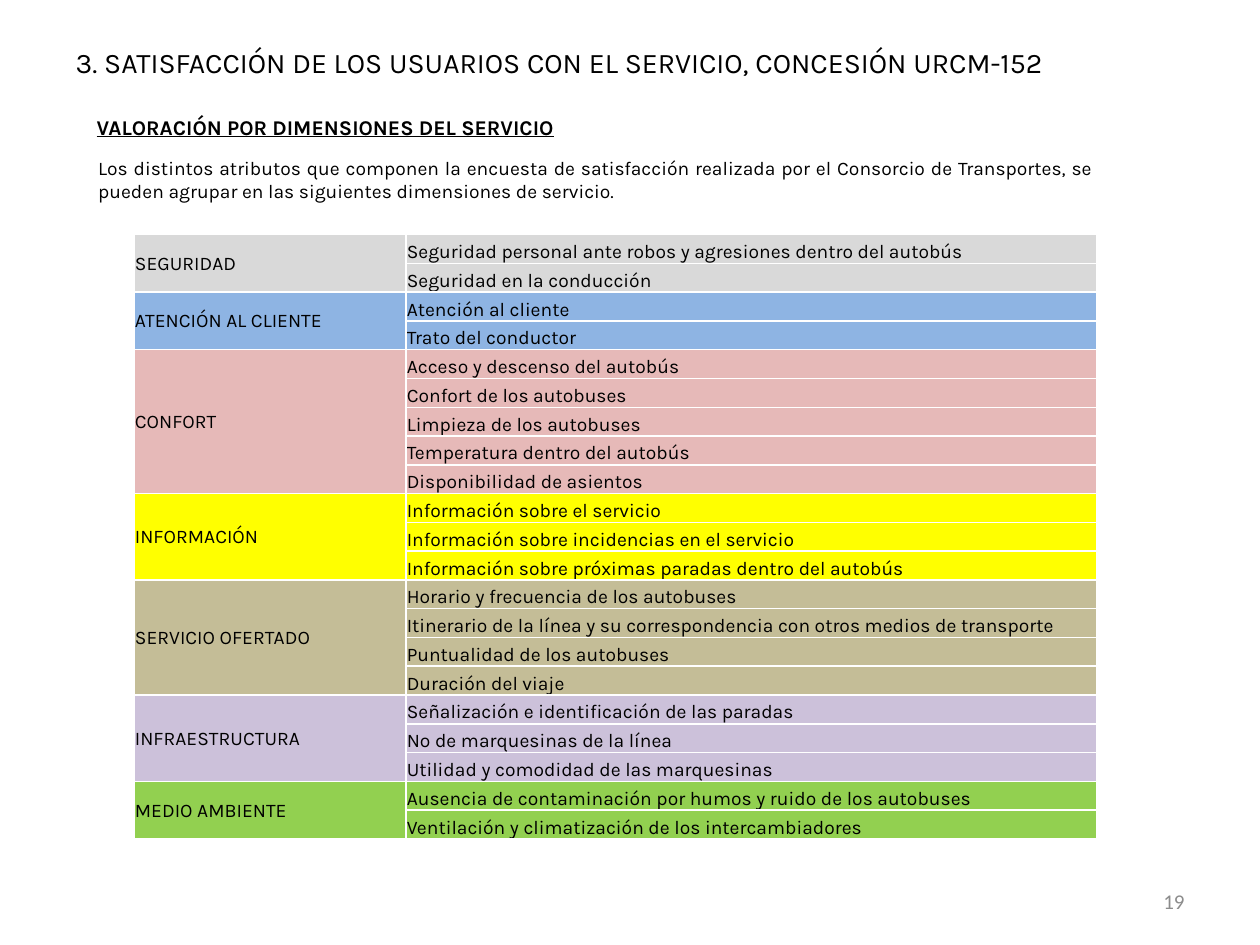
"""Build the slide that groups the survey attributes by service dimension."""
from lxml.etree import SubElement
from pptx import Presentation
from pptx.dml.color import RGBColor
from pptx.enum.text import MSO_ANCHOR as Anchor, MSO_AUTO_SIZE as AutoSize, PP_ALIGN as Align
from pptx.oxml.ns import qn
from pptx.util import Cm, Pt

BLACK = RGBColor(0x00, 0x00, 0x00)
WHITE = RGBColor(0xFF, 0xFF, 0xFF)
GRAY = RGBColor(0x8C, 0x8C, 0x8C)
SILVER = RGBColor(0xD9, 0xD9, 0xD9)
BLUE = RGBColor(0x8E, 0xB4, 0xE3)
PINK = RGBColor(0xE6, 0xB9, 0xB8)
YELLOW = RGBColor(0xFF, 0xFF, 0x00)
TAN = RGBColor(0xC4, 0xBD, 0x97)
LILAC = RGBColor(0xCC, 0xC1, 0xDA)
GREEN = RGBColor(0x92, 0xD0, 0x50)

TITLE = "3. SATISFACCIÓN DE LOS USUARIOS CON EL SERVICIO, CONCESIÓN URCM-152"
HEADING = "VALORACIÓN POR DIMENSIONES DEL SERVICIO"
INTRO = (
    "Los distintos atributos que componen la encuesta de satisfacción realizada por el "
    "Consorcio de Transportes, se pueden agrupar en las siguientes dimensiones de servicio."
)
PAGE_NUMBER = "19"
DIMENSIONS = [
    ("SEGURIDAD", SILVER, [
        "Seguridad personal ante robos y agresiones dentro del autobús",
        "Seguridad en la conducción",
    ]),
    ("ATENCIÓN AL CLIENTE", BLUE, ["Atención al cliente", "Trato del conductor"]),
    ("CONFORT", PINK, [
        "Acceso y descenso del autobús",
        "Confort de los autobuses",
        "Limpieza de los autobuses",
        "Temperatura dentro del autobús",
        "Disponibilidad de asientos",
    ]),
    ("INFORMACIÓN", YELLOW, [
        "Información sobre el servicio",
        "Información sobre incidencias en el servicio",
        "Información sobre próximas paradas dentro del autobús",
    ]),
    ("SERVICIO OFERTADO", TAN, [
        "Horario y frecuencia de los autobuses",
        "Itinerario de la línea y su correspondencia con otros medios de transporte",
        "Puntualidad de los autobuses",
        "Duración del viaje",
    ]),
    ("INFRAESTRUCTURA", LILAC, [
        "Señalización e identificación de las paradas",
        "Nº de marquesinas de la línea",
        "Utilidad y comodidad de las marquesinas",
    ]),
    ("MEDIO AMBIENTE", GREEN, [
        "Ausencia de contaminación por humos y ruido de los autobuses",
        "Ventilación y climatización de los intercambiadores",
    ]),
]

COLUMN_WIDTHS = [Cm(5.48), Cm(13.92)]
ROW_HEIGHT = Cm(0.58)
FRAME_FORMAT = {"word_wrap": True, "auto_size": AutoSize.NONE}
CELL_FORMAT = {
    "margin_left": Cm(0.02), "margin_right": Cm(0.02),
    "margin_top": Cm(0.02), "margin_bottom": 0,
}
BORDER_SIDES = ("a:lnL", "a:lnR", "a:lnT", "a:lnB")


def set_attributes(target, values):
    for name, value in values.items():
        setattr(target, name, value)


def write(frame, text, size, align=Align.LEFT, color=BLACK, **font_format):
    paragraph = frame.paragraphs[0]
    paragraph.alignment = align
    run = paragraph.add_run()
    run.text = text
    set_attributes(run.font, {"name": "Karla", "size": Pt(size), **font_format})
    run.font.color.rgb = color


def place_text(shape, box, text, size, anchor=Anchor.TOP, **text_format):
    set_attributes(shape, dict(zip(("left", "top", "width", "height"), map(Cm, box))))
    set_attributes(shape.text_frame, {**FRAME_FORMAT, "vertical_anchor": anchor})
    write(shape.text_frame, text, size, **text_format)


def add_text(slide, box, text, size, **text_format):
    place_text(slide.shapes.add_textbox(0, 0, 0, 0), box, text, size, **text_format)


def style_cell(cell, color):
    set_attributes(cell, CELL_FORMAT)
    properties = cell._tc.get_or_add_tcPr()
    for side in BORDER_SIDES:
        border = SubElement(properties, qn(side), w=str(Pt(1)))
        fill = SubElement(border, qn("a:solidFill"))
        SubElement(fill, qn("a:srgbClr"), val=str(WHITE))
    cell.fill.solid()
    cell.fill.fore_color.rgb = color


def fill_cell(cell, text, anchor):
    cell.vertical_anchor = anchor
    write(cell.text_frame, text, 11)


def add_dimension_table(slide):
    row_count = sum(len(attributes) for _, _, attributes in DIMENSIONS)
    table = slide.shapes.add_table(
        row_count, len(COLUMN_WIDTHS), Cm(2.7), Cm(4.73),
        sum(COLUMN_WIDTHS), ROW_HEIGHT * row_count,
    ).table
    set_attributes(table, {"first_row": False, "horz_banding": False})
    for column, width in zip(table.columns, COLUMN_WIDTHS):
        column.width = width
    for row in table.rows:
        row.height = ROW_HEIGHT
    first = 0
    for dimension, color, attributes in DIMENSIONS:
        for row, attribute in enumerate(attributes, first):
            for column in range(len(COLUMN_WIDTHS)):
                style_cell(table.cell(row, column), color)
            fill_cell(table.cell(row, 1), attribute, Anchor.BOTTOM)
        head = table.cell(first, 0)
        head.merge(table.cell(first + len(attributes) - 1, 0))
        fill_cell(head, dimension, Anchor.MIDDLE)
        first += len(attributes)


def main():
    presentation = Presentation()
    presentation.slide_width, presentation.slide_height = Cm(25.4), Cm(19.05)
    slide = presentation.slides.add_slide(presentation.slide_layouts[5])
    place_text(slide.shapes.title, (1.27, 0.76, 22.63, 0.97), TITLE, 16.2, Anchor.MIDDLE)
    add_text(slide, (1.7, 2.18, 21.41, 0.76), HEADING, 12,
             align=Align.JUSTIFY, bold=True, underline=True)
    add_dimension_table(slide)
    add_text(slide, (1.73, 3.02, 20.57, 1.19), INTRO, 11, align=Align.JUSTIFY)
    add_text(slide, (18.21, 17.65, 5.92, 1.02), PAGE_NUMBER, 12, anchor=Anchor.MIDDLE,
             align=Align.RIGHT, color=GRAY, name="Calibri")
    presentation.save("out.pptx")


if __name__ == "__main__":
    main()
